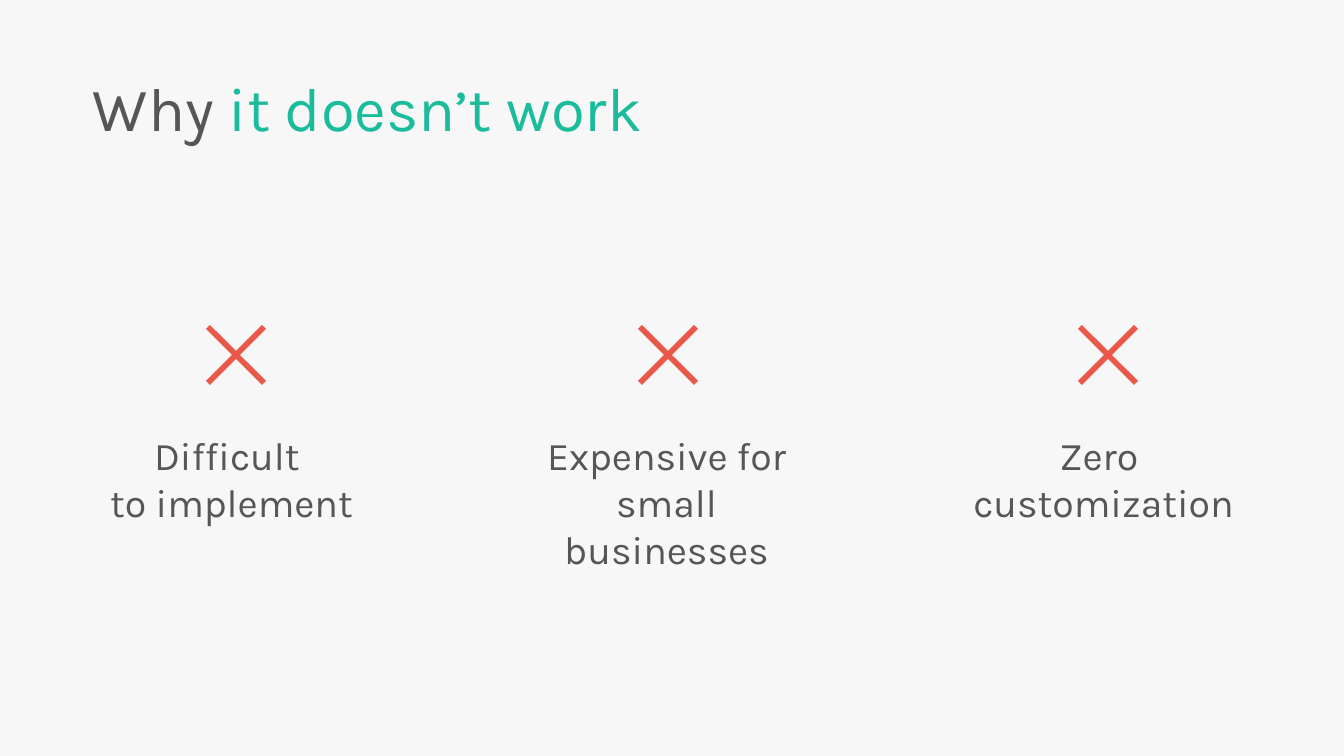
import pptx
import pptx.util
import pptx.dml.color
import pptx.enum.text

RGB = pptx.dml.color.RGBColor
ALIGN = pptx.enum.text.PP_ALIGN
PAPER = RGB(0xF7, 0xF7, 0xF7)
GREY = RGB(0x56, 0x56, 0x56)
GREEN = RGB(0x1A, 0xBC, 0x9C)
RED = RGB(0xE9, 0x58, 0x49)

TITLE = [("Why ", GREY), ("it doesn’t work", GREEN)]
REASONS = [
    ("Difficult \nto implement", 93, 206),
    ("Expensive for small businesses", 528, 638),
    ("Zero \ncustomization", 965, 1078),
]
CROSS = [(60, 4), (56, 0), (30, 26), (4, 0), (0, 4), (26, 30),
         (0, 56), (4, 60), (30, 34), (56, 60), (60, 56), (34, 30)]
CROSS_TOP = 325
SCALE = 914400 / 100.8

FRAME = {
    "margin_left": 0,
    "margin_right": pptx.util.Inches(0.1),
    "margin_top": pptx.util.Inches(0.05),
    "margin_bottom": pptx.util.Inches(0.05),
    "word_wrap": True,
    "auto_size": pptx.enum.text.MSO_AUTO_SIZE.NONE,
    "vertical_anchor": pptx.enum.text.MSO_ANCHOR.TOP,
}


def px(n):
    return round(n * SCALE)


def apply(item, values):
    for name, value in values.items():
        setattr(item, name, value)


def style(run, size, color):
    apply(run.font, {"name": "Karla", "size": pptx.util.Pt(size)})
    run.font.color.rgb = color


def add_title(slide):
    title = slide.shapes.title
    apply(title, {"left": px(93), "top": px(73),
                  "width": px(574), "height": px(144)})
    apply(title.text_frame, FRAME)
    para = title.text_frame.paragraphs[0]
    apply(para, {"alignment": ALIGN.LEFT, "line_spacing": 0.9})
    for text, color in TITLE:
        run = para.add_run()
        run.text = text
        style(run, 44, color)


def add_label(slide, text, left):
    box = slide.shapes.add_textbox(px(left), px(426), px(287), px(105))
    apply(box.text_frame, FRAME)
    para = box.text_frame.paragraphs[0]
    apply(para, {"text": text, "alignment": ALIGN.CENTER})
    for run in para.runs:
        style(run, 28, GREY)


def add_cross(slide, left):
    path = slide.shapes.build_freeform(*CROSS[0], scale=SCALE)
    path.add_line_segments(CROSS[1:], close=True)
    cross = path.convert_to_shape(px(left), px(CROSS_TOP))
    cross.shadow.inherit = False
    cross.fill.solid()
    cross.fill.fore_color.rgb = RED
    cross.line.fill.background()


def main():
    deck = pptx.Presentation()
    apply(deck, {"slide_width": px(1344), "slide_height": px(756)})
    slide = deck.slides.add_slide(deck.slide_layouts[5])
    slide.background.fill.solid()
    slide.background.fill.fore_color.rgb = PAPER
    add_title(slide)
    for text, left, mark in REASONS:
        add_label(slide, text, left)
        add_cross(slide, mark)
    deck.save("out.pptx")


if __name__ == "__main__":
    main()
